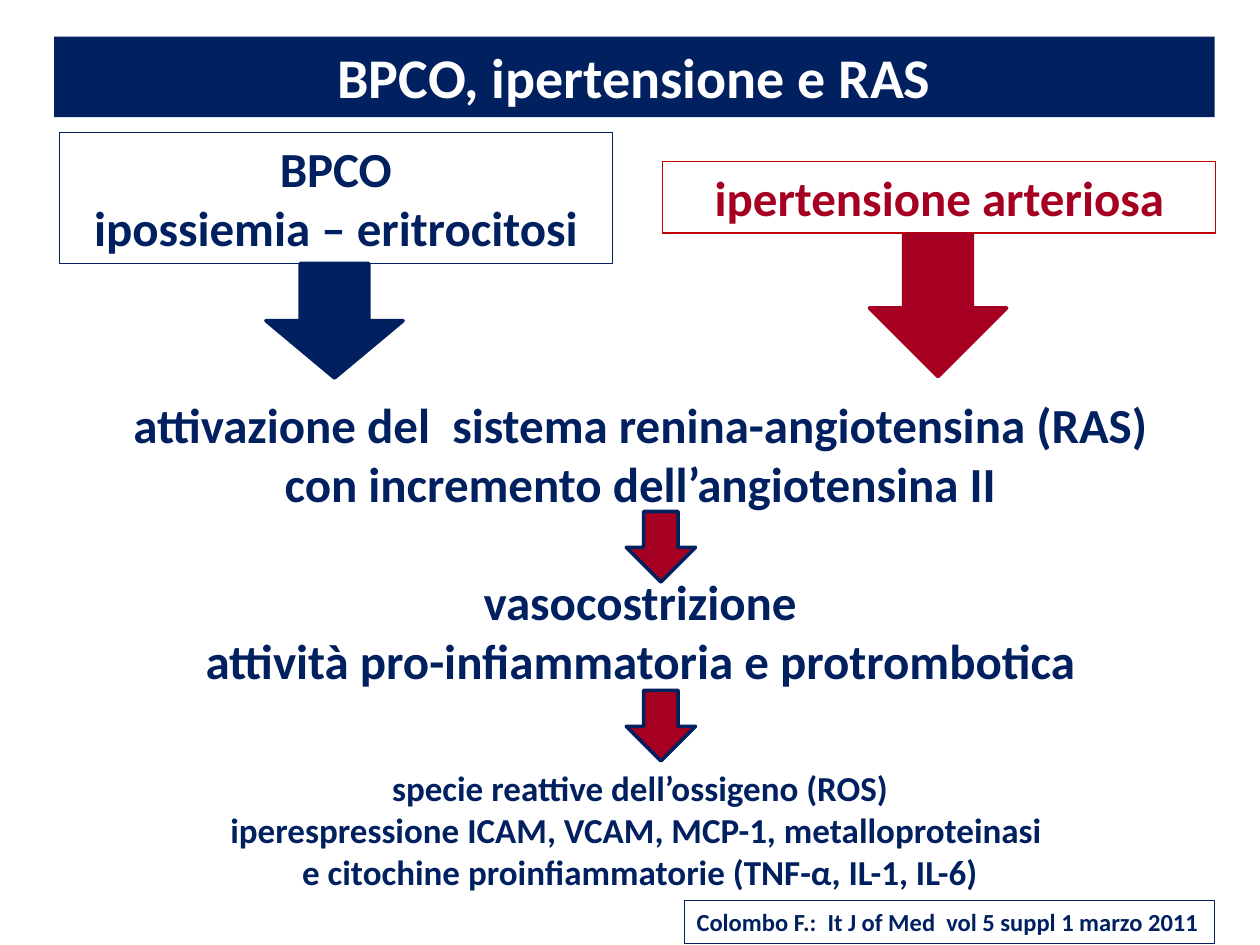
from dataclasses import dataclass
from typing import Optional

from pptx import Presentation
from pptx.dml.color import RGBColor
from pptx.enum.shapes import MSO_SHAPE as Shape
from pptx.enum.text import MSO_ANCHOR as Anchor, PP_ALIGN as Align
from pptx.util import Inches, Pt

COLORS = {"navy": "002060", "red": "A50021", "border red": "C00000", "white": "FFFFFF"}
FONT = "Calibri"


@dataclass
class Line:
    text: str
    size: float = 28
    space_before: float = 0


@dataclass
class Box:
    left: float
    top: float
    width: float
    height: float
    lines: list[Line]
    color: str = "navy"
    fill: Optional[str] = None
    border: Optional[str] = None
    align: Align = Align.CENTER
    wrap: bool = True


@dataclass
class Arrow:
    left: float
    top: float
    width: float
    height: float
    fill: str
    border: str


def rgb(name: str) -> RGBColor:
    return RGBColor.from_string(COLORS[name])


def add_line(paragraph, line: Line, *, color: str, align: Align) -> None:
    paragraph.alignment = align
    paragraph.space_before = Pt(line.space_before)
    run = paragraph.add_run()
    run.text = line.text
    run.font.name = FONT
    run.font.size = Pt(line.size)
    run.font.bold = True
    run.font.color.rgb = rgb(color)


def write_lines(shape, lines: list[Line], *, color: str, align: Align, wrap: bool) -> None:
    frame = shape.text_frame
    frame.word_wrap = wrap
    frame.vertical_anchor = Anchor.TOP
    for index, line in enumerate(lines):
        paragraph = frame.add_paragraph() if index else frame.paragraphs[0]
        add_line(paragraph, line, color=color, align=align)


def style_shape(shape, fill: Optional[str], border: Optional[str], width: float) -> None:
    shape.shadow.inherit = False
    if fill:
        shape.fill.solid()
        shape.fill.fore_color.rgb = rgb(fill)
    else:
        shape.fill.background()
    if border:
        shape.line.color.rgb = rgb(border)
        shape.line.width = Pt(width)
    else:
        shape.line.fill.background()


def add_box(slide, box: Box) -> None:
    """Draw a rectangle, or a plain text box when it has no fill or border."""
    place = [Inches(v) for v in (box.left, box.top, box.width, box.height)]
    if box.fill or box.border:
        shape = slide.shapes.add_shape(Shape.RECTANGLE, *place)
        style_shape(shape, box.fill, box.border, 0.75)
    else:
        shape = slide.shapes.add_textbox(*place)
    write_lines(shape, box.lines, color=box.color, align=box.align, wrap=box.wrap)


def add_arrow(slide, arrow: Arrow) -> None:
    place = [Inches(v) for v in (arrow.left, arrow.top, arrow.width, arrow.height)]
    shape = slide.shapes.add_shape(Shape.DOWN_ARROW, *place)
    style_shape(shape, arrow.fill, arrow.border, 2)


BOXES = [
    Box(0.43, 0.29, 9.21, 0.64, [Line("BPCO, ipertensione e RAS", 32)],
        color="white", fill="navy"),
    Box(0.52, 3.08, 9.12, 4.07, [
        Line("attivazione del  sistema renina-angiotensina (RAS)"),
        Line("con incremento dell’angiotensina II"),
        Line("vasocostrizione", space_before=34),
        Line("attività pro-infiammatoria e protrombotica"),
        Line("specie reattive dell’ossigeno (ROS)", 20, space_before=44),
        Line("iperespressione ICAM, VCAM, MCP-1, metalloproteinasi ", 20),
        Line("e citochine proinfiammatorie (TNF-α, IL-1, IL-6)", 20),
    ]),
    Box(0.47, 1.05, 4.39, 1.04, [Line("BPCO"), Line("ipossiemia – eritrocitosi")],
        border="navy"),
    Box(5.26, 1.28, 4.39, 0.57, [Line("ipertensione arteriosa")],
        color="red", border="border red"),
    Box(5.43, 7.15, 4.21, 0.34,
        [Line("Colombo F.:  It J of Med  vol 5 suppl 1 marzo 2011", 14)],
        border="navy", align=Align.LEFT, wrap=False),
]

ARROWS = [
    Arrow(6.9, 1.86, 1.09, 1.13, "red", "red"),
    Arrow(2.11, 2.09, 1.09, 0.91, "navy", "navy"),
    *(Arrow(4.97, top, 0.55, 0.56, "red", "navy") for top in (4.06, 5.48)),
]


def main() -> None:
    presentation = Presentation()
    presentation.slide_width = Inches(10)
    presentation.slide_height = Inches(7.5)
    slide = presentation.slides.add_slide(presentation.slide_layouts[6])
    for box in BOXES:
        add_box(slide, box)
    for arrow in ARROWS:
        add_arrow(slide, arrow)
    presentation.save("out.pptx")


if __name__ == "__main__":
    main()
